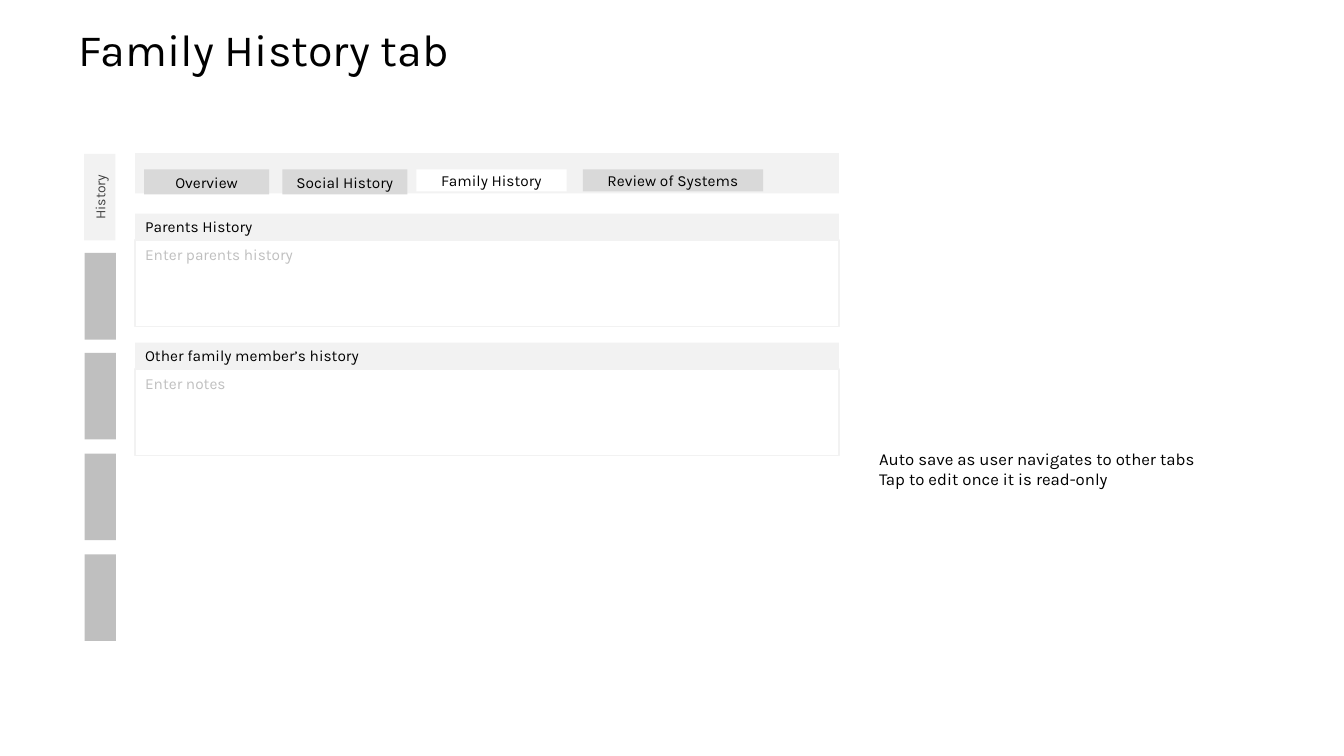
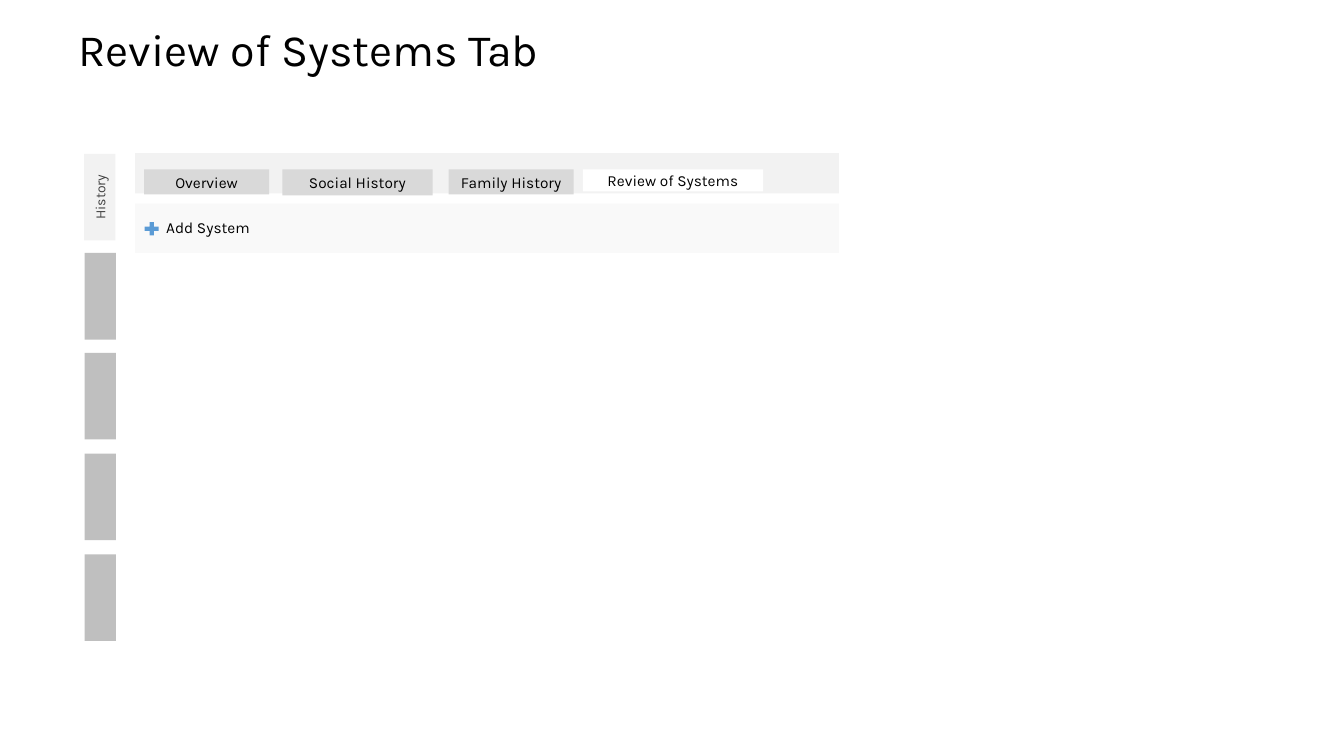
"""Build two wireframe slides for the tabs of a patient history form."""
from dataclasses import dataclass

from pptx import Presentation
from pptx.dml.color import RGBColor as Rgb
from pptx.enum.shapes import MSO_SHAPE as Kind
from pptx.enum.text import MSO_ANCHOR as Anchor, PP_ALIGN as Align
from pptx.shapes.autoshape import Shape
from pptx.slide import Slide
from pptx.util import Emu, Pt

SCALE = 9144
FACE = "Karla"
BLACK, WHITE, BLUE = "000000", "FFFFFF", "5B9BD5"
DARK, GREY, MID, PALE, FAINT = "404040", "BFBFBF", "D9D9D9", "F2F2F2", "F9F9F9"
LEFT, WIDE = 134, 698
RAIL, RAIL_W, RAIL_H, STEP = 84, 31, 86, 99.5
TAB_TOP = 168
HEAD_H, BODY_H = 26, 86


@dataclass(frozen=True)
class Box:
    left: int
    top: int
    wide: int
    high: int


@dataclass(frozen=True)
class Tab:
    name: str
    left: int
    wide: int
    high: int = 25
    fill: str = MID


@dataclass(frozen=True)
class Field:
    name: str
    hint: str
    top: int


TITLE = Box(68, 17, 1176, 97)
BAR = Box(LEFT, 152, WIDE, 40)
OVERVIEW = Tab("Overview", 143, 124)
FAMILY_TABS = (
    OVERVIEW,
    Tab("Social History", 280, 124),
    Tab("Family History", 413, 149, 22, WHITE),
    Tab("Review of Systems", 578, 179, 22),
)
REVIEW_TABS = (
    OVERVIEW,
    Tab("Social History", 280, 149, 26),
    Tab("Family History", 445, 124),
    Tab("Review of Systems", 578, 179, 22, WHITE),
)
FIELDS = (
    Field("Parents History", "Enter parents history", 212),
    Field("Other family member’s history", "Enter notes", 340),
)
NOTES = "Auto save as user navigates to other tabs\nTap to edit once it is read-only"


def px(size: float) -> Emu:
    return Emu(round(size * SCALE))


def tint(code: str) -> Rgb:
    return Rgb.from_string(code)


def place(box: Box) -> tuple[Emu, Emu, Emu, Emu]:
    return px(box.left), px(box.top), px(box.wide), px(box.high)


def write(shape: Shape, text: str, size: int = 11, ink: str = BLACK,
          align: Align = Align.LEFT, anchor: Anchor = Anchor.TOP) -> None:
    frame = shape.text_frame
    frame.text = text
    for key, val in {"word_wrap": True, "vertical_anchor": anchor}.items():
        setattr(frame, key, val)
    form = {"name": FACE, "size": Pt(size), "bold": False}
    for para in frame.paragraphs:
        para.alignment = align
        for run in para.runs:
            for key, val in form.items():
                setattr(run.font, key, val)
            run.font.color.rgb = tint(ink)


def block(slide: Slide, box: Box, fill: str, edge: str = "", kind: Kind = Kind.RECTANGLE) -> Shape:
    shape = slide.shapes.add_shape(kind, *place(box))
    shape.shadow.inherit = False
    shape.fill.solid()
    shape.fill.fore_color.rgb = tint(fill)
    if edge:
        shape.line.color.rgb = tint(edge)
        shape.line.width = Pt(1)
    else:
        shape.line.fill.background()
    return shape


def label(slide: Slide, box: Box, text: str, size: int = 11) -> None:
    write(slide.shapes.add_textbox(*place(box)), text, size)


def draw_rail(slide: Slide) -> None:
    mark = block(slide, Box(56, 180, RAIL_H, RAIL_W), PALE)
    mark.rotation = 270
    write(mark, "History", 10, DARK, Align.CENTER, Anchor.MIDDLE)
    for i in range(4):
        block(slide, Box(RAIL, round(251 + i * STEP), RAIL_W, RAIL_H), GREY)


def draw_tabs(slide: Slide, tabs: tuple[Tab, ...]) -> None:
    block(slide, BAR, PALE)
    for tab in tabs:
        shape = block(slide, Box(tab.left, TAB_TOP, tab.wide, tab.high), tab.fill)
        write(shape, tab.name, align=Align.CENTER, anchor=Anchor.MIDDLE)


def draw_field(slide: Slide, field: Field) -> None:
    body = block(slide, Box(LEFT, field.top + HEAD_H, WIDE, BODY_H), WHITE, PALE)
    write(body, field.hint, ink=GREY)
    head = block(slide, Box(LEFT, field.top, WIDE, HEAD_H), PALE)
    write(head, field.name, anchor=Anchor.MIDDLE)


def start(deck: Presentation, title: str, tabs: tuple[Tab, ...]) -> Slide:
    slide = deck.slides.add_slide(deck.slide_layouts[6])
    label(slide, TITLE, title, 32)
    draw_rail(slide)
    draw_tabs(slide, tabs)
    return slide


def draw_family(deck: Presentation) -> None:
    slide = start(deck, "Family History tab", FAMILY_TABS)
    for field in FIELDS:
        draw_field(slide, field)
    write(block(slide, Box(862, 440, 378, 93), WHITE), NOTES, 12)


def draw_review(deck: Presentation) -> None:
    slide = start(deck, "Review of Systems Tab", REVIEW_TABS)
    block(slide, Box(LEFT, 202, WIDE, 49), FAINT)
    label(slide, Box(155, 211, 151, 29), "Add System")
    block(slide, Box(141, 218, 19, 18), BLUE, kind=Kind.MATH_PLUS)


def main() -> None:
    deck = Presentation()
    deck.slide_width, deck.slide_height = px(1333), px(750)
    draw_family(deck)
    draw_review(deck)
    deck.save("out.pptx")


if __name__ == "__main__":
    main()
